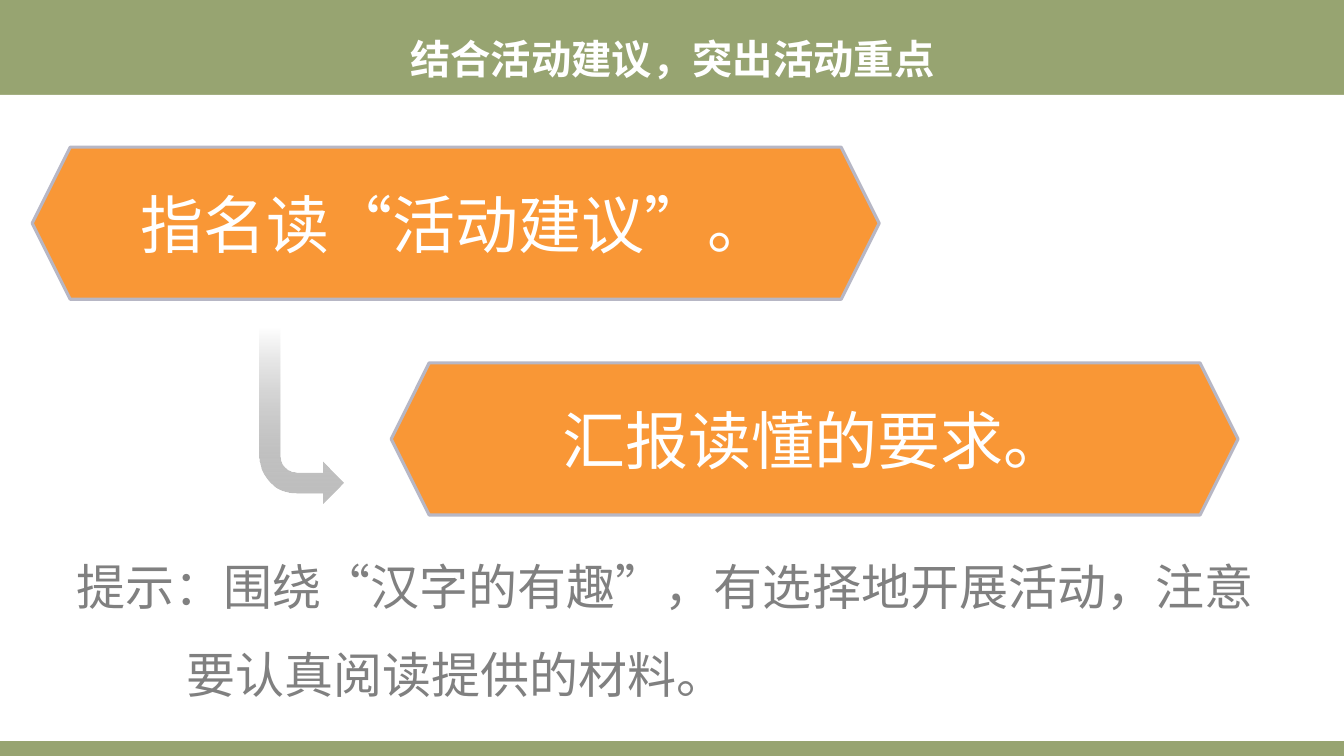
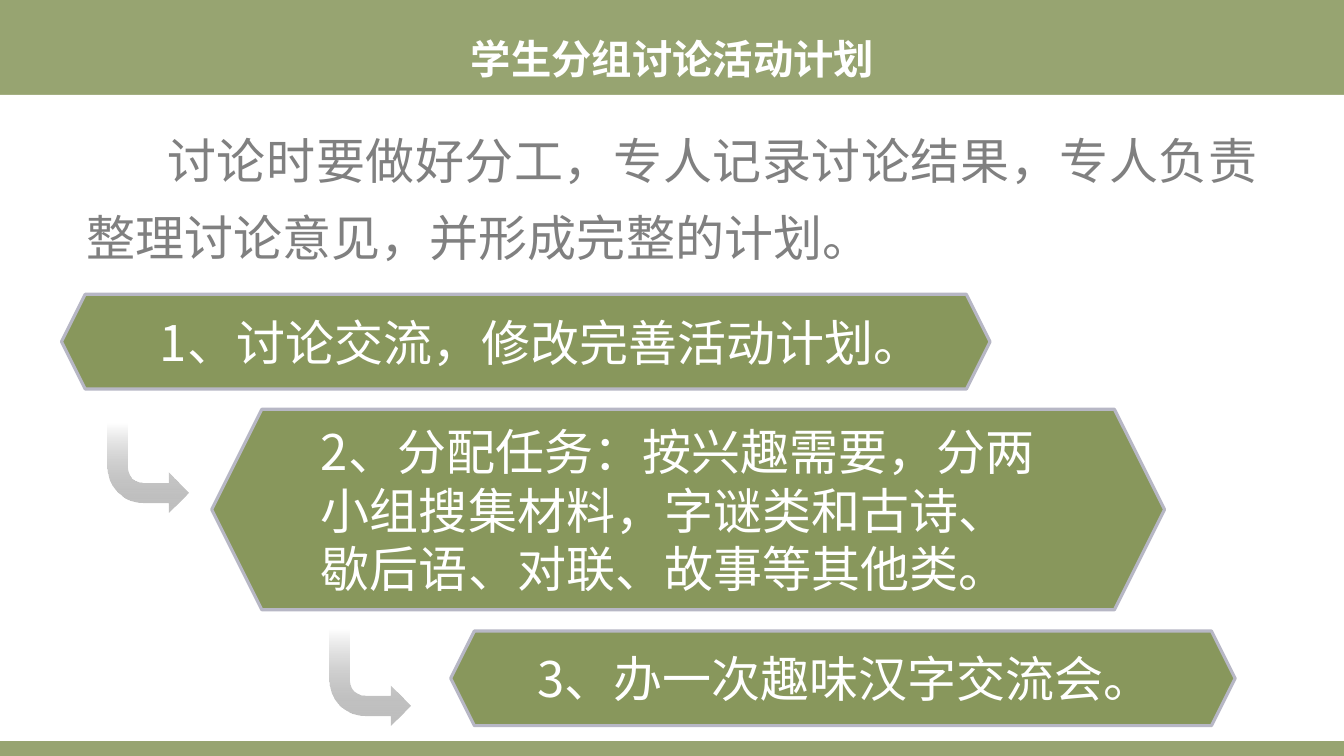
from lxml.etree import SubElement
from pptx import Presentation
from pptx.dml.color import RGBColor
from pptx.enum.shapes import MSO_SHAPE as Shape
from pptx.enum.text import MSO_ANCHOR as Anchor, MSO_AUTO_SIZE as AutoSize, PP_ALIGN as Align
from pptx.oxml.ns import qn
from pptx.util import Inches, Pt

WIDTH, HEIGHT = 13.33, 7.5
HEADER_HEIGHT, FOOTER_HEIGHT = 0.94, 0.15
GREEN, ORANGE = "88975C", "F99736"
OUTLINE, WHITE, GREY = "B7B7C5", "FFFFFF", "808080"
ARROW_SOLID, ARROW_FADED = "BFBFBF", "717171"
CJK_FONT, TITLE_FONT = "Noto Sans CJK SC", "Montserrat"
BODY_SIZE = 35


def color(hex_code):
    return RGBColor.from_string(hex_code)


def add_shape(slide, kind, box):
    shape = slide.shapes.add_shape(kind, *map(Inches, box))
    shape.shadow.inherit = False
    return shape


def set_last_alpha(shape, percent):
    """Set the opacity of the last colour in the shape's fill."""
    last = shape._element.spPr.findall(".//" + qn("a:srgbClr"))[-1]
    SubElement(last, qn("a:alpha")).set("val", str(percent * 1000))


def add_panel(slide, top, height, fill):
    """Add a full-width rectangle without an outline."""
    panel = add_shape(slide, Shape.RECTANGLE, (0, top, WIDTH, height))
    panel.fill.solid()
    panel.fill.fore_color.rgb = color(fill)
    panel.line.fill.background()
    return panel


def set_margins(frame):
    frame.word_wrap = True
    frame.vertical_anchor = Anchor.MIDDLE
    frame.margin_left = frame.margin_right = Inches(0.13)
    frame.margin_top = frame.margin_bottom = Inches(0.07)


def style(paragraph, size, ink, align, latin=CJK_FONT, bold=False):
    paragraph.alignment = align
    font = paragraph.font
    font.size, font.bold, font.name = Pt(size), bold, latin
    font.color.rgb = color(ink)
    east_asian = SubElement(paragraph._p.pPr.find(qn("a:defRPr")), qn("a:ea"))
    east_asian.set("typeface", CJK_FONT)


def add_title(slide, text):
    frame = slide.shapes.add_textbox(*map(Inches, (0.92, 0.31, 11.5, 0.6))).text_frame
    frame.word_wrap = True
    frame.vertical_anchor = Anchor.MIDDLE
    title = frame.paragraphs[0]
    title.text = text
    title.line_spacing = 0.9
    style(title, 28.8, WHITE, Align.CENTER, TITLE_FONT, bold=True)


def add_body(slide, box, lines):
    """Add grey paragraphs, given as (text, first-line indent in inches)."""
    frame = slide.shapes.add_textbox(*map(Inches, box)).text_frame
    set_margins(frame)
    frame.auto_size = AutoSize.SHAPE_TO_FIT_TEXT
    for number, (text, indent) in enumerate(lines):
        paragraph = frame.add_paragraph() if number else frame.paragraphs[0]
        paragraph.text = text
        paragraph.line_spacing = 1.3
        paragraph.space_after = Pt(8)
        style(paragraph, BODY_SIZE, GREY, Align.JUSTIFY)
        paragraph._p.pPr.set("indent", str(Inches(indent)))


def add_step(slide, box, text, fill, size=BODY_SIZE, align=Align.LEFT):
    step = add_shape(slide, Shape.HEXAGON, box)
    step.fill.solid()
    step.fill.fore_color.rgb = color(fill)
    step.line.color.rgb = color(OUTLINE)
    step.line.width = Pt(2.25)
    set_margins(step.text_frame)
    paragraph = step.text_frame.paragraphs[0]
    paragraph.text = text
    style(paragraph, size, WHITE, align)


def add_arrow(slide, box):
    """Add an arrow that fades in downwards and bends to the right."""
    arrow = add_shape(slide, Shape.BENT_ARROW, box)
    arrow.rotation = 180
    arrow._element.spPr.find(qn("a:xfrm")).set("flipH", "1")
    arrow.line.fill.background()
    arrow.fill.gradient()
    arrow.fill.gradient_angle = 270
    solid, faded = arrow.fill.gradient_stops
    solid.position, faded.position = 0, 1
    solid.color.rgb = color(ARROW_SOLID)
    faded.color.rgb = color(ARROW_FADED)
    set_last_alpha(arrow, 0)


def new_slide(deck, title):
    slide = deck.slides.add_slide(deck.slide_layouts[6])
    set_last_alpha(add_panel(slide, 0, HEIGHT, GREEN), 87)
    add_panel(slide, HEADER_HEIGHT, HEIGHT - HEADER_HEIGHT - FOOTER_HEIGHT, WHITE)
    add_title(slide, title)
    return slide


def add_suggestions(deck):
    slide = new_slide(deck, "结合活动建议，突出活动重点")
    add_arrow(slide, (2.57, 3.25, 0.84, 1.74))
    add_body(slide, (0.63, 5.28, 12.08, 1.77), (
        ("提示：围绕“汉字的有趣”，有选择地开展活动，注意", 0),
        ("要认真阅读提供的材料。", 1.09),
    ))
    for left, top, text in ((0.32, 1.46, "指名读“活动建议”。"),
                            (3.88, 3.6, "汇报读懂的要求。")):
        add_step(slide, (left, top, 8.4, 1.51), text, ORANGE, 45, Align.CENTER)


def add_plan(deck):
    slide = new_slide(deck, "学生分组讨论活动计划")
    add_body(slide, (0.73, 1.05, 11.88, 1.66), (
        ("讨论时要做好分工，专人记录讨论结果，专人负责整理讨论意见，并形成完整的计划。", 0.8),
    ))
    for box, text in (
        ((0.61, 2.92, 9.21, 0.94), "1、讨论交流，修改完善活动计划。"),
        ((2.1, 4.06, 9.45, 1.99),
         "2、分配任务：按兴趣需要，分两小组搜集材料，字谜类和古诗、歇后语、对联、故事等其他类。"),
        ((4.47, 6.26, 7.78, 0.94), "3、办一次趣味汉字交流会。"),
    ):
        add_step(slide, box, text, GREEN)
    add_arrow(slide, (1.07, 4.2, 0.8, 0.88))
    add_arrow(slide, (3.27, 6.25, 0.8, 0.95))


def main():
    deck = Presentation()
    deck.slide_width, deck.slide_height = Inches(WIDTH), Inches(HEIGHT)
    add_suggestions(deck)
    add_plan(deck)
    deck.save("out.pptx")


if __name__ == "__main__":
    main()
